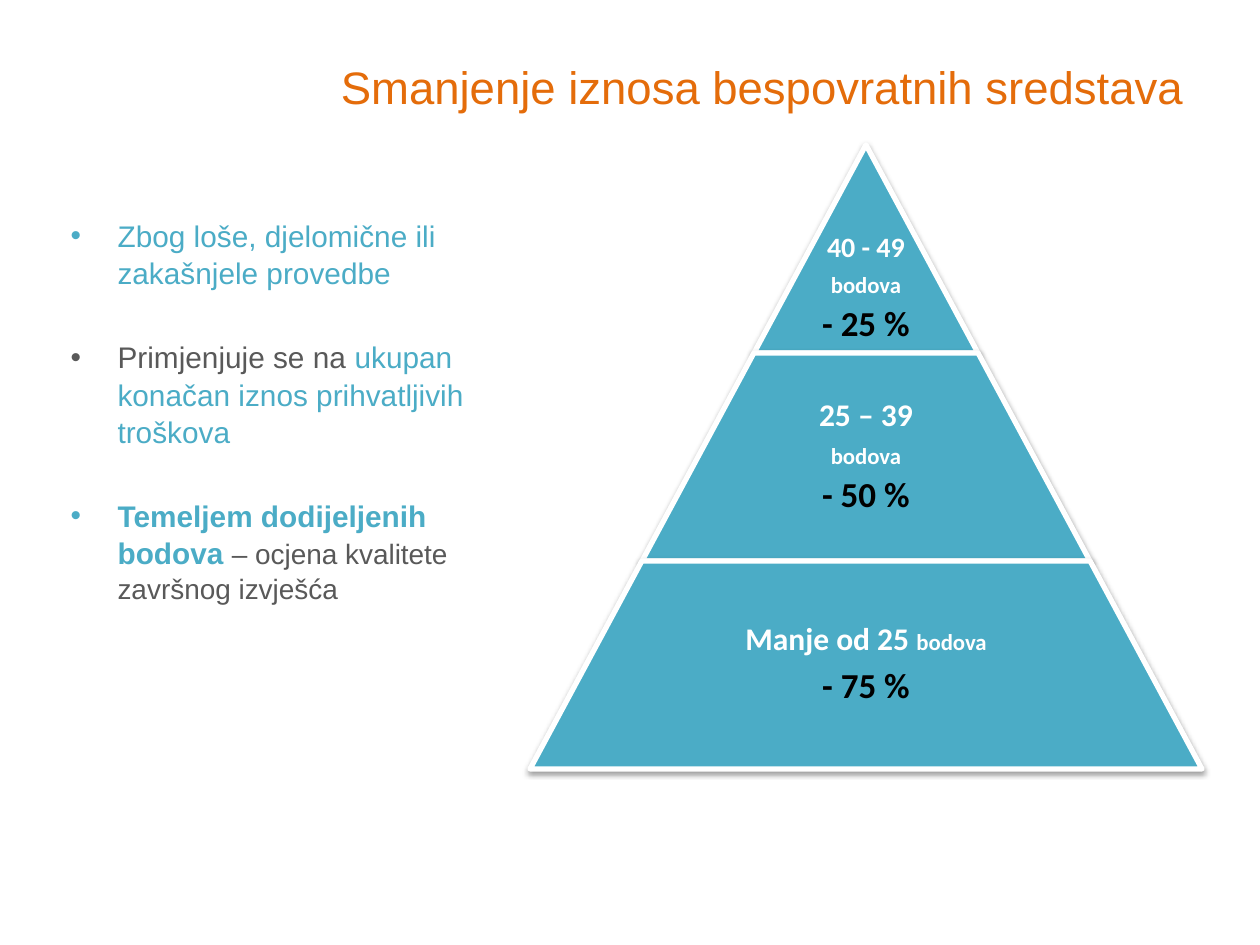
import dataclasses

import lxml.etree
import pptx
import pptx.dml.color
import pptx.enum.shapes
import pptx.enum.text
import pptx.oxml
import pptx.oxml.ns
import pptx.util

EMU_PER_PX = 914400 / 126
ALIGN = pptx.enum.text.PP_ALIGN
ANCHOR = pptx.enum.text.MSO_ANCHOR


@dataclasses.dataclass(frozen=True)
class Theme:
    orange: str = "E46C0A"
    teal: str = "4BACC6"
    grey: str = "595959"
    white: str = "FFFFFF"
    black: str = "000000"
    slide_font: str = "Arial"
    pyramid_font: str = "Calibri"
    title: int = 26
    body: int = 17
    body_small: int = 16
    peak: int = 16
    range: int = 18
    unit: int = 13
    cut: int = 20
    tier_line: int = 3


THEME = Theme()


def px(length):
    return pptx.util.Emu(round(length * EMU_PER_PX))


def rgb(colour):
    return pptx.dml.color.RGBColor.from_string(colour)


def place(shape, left, top, width, height):
    shape.left, shape.top = px(left), px(top)
    shape.width, shape.height = px(width), px(height)


def add_text(paragraph, text, *, size, colour, font=THEME.slide_font, bold=False):
    run = paragraph.add_run()
    run.text = text
    run.font.size = pptx.util.Pt(size)
    run.font.name = font
    run.font.bold = bold
    run.font.color.rgb = rgb(colour)


def prepare_frame(frame, anchor, inset=None):
    frame.word_wrap = True
    frame.auto_size = pptx.enum.text.MSO_AUTO_SIZE.NONE
    frame.vertical_anchor = anchor
    if inset is not None:
        frame.margin_left = frame.margin_right = px(inset)
        frame.margin_top = frame.margin_bottom = px(inset)


def next_paragraph(frame, index):
    return frame.paragraphs[0] if index == 0 else frame.add_paragraph()


def add_title(slide, text):
    title = slide.shapes.title
    place(title, 312, 43, 885, 87)
    prepare_frame(title.text_frame, ANCHOR.MIDDLE)
    heading = title.text_frame.paragraphs[0]
    heading.alignment = ALIGN.RIGHT
    add_text(heading, text, size=THEME.title, colour=THEME.orange)


def set_bullet(paragraph, indent):
    properties = paragraph._p.get_or_add_pPr()
    properties.set("marL", str(px(indent)))
    properties.set("indent", str(-px(indent)))
    bullet = lxml.etree.SubElement(properties, pptx.oxml.ns.qn("a:buChar"))
    bullet.set("char", "•")


def add_reasons(slide, reasons):
    body = slide.placeholders[1]
    place(body, 58, 210, 438, 494)
    prepare_frame(body.text_frame, ANCHOR.TOP)
    for index, parts in enumerate(reasons):
        reason = next_paragraph(body.text_frame, index)
        set_bullet(reason, 47)
        reason.alignment = ALIGN.LEFT
        reason.line_spacing = 1.04
        reason.space_before = pptx.util.Pt(27 if index else 0)
        for text, style in parts:
            add_text(reason, text, **style)


def add_soft_shadow(shape):
    shape._element.spPr.append(pptx.oxml.parse_xml(
        f'<a:effectLst {pptx.oxml.ns.nsdecls("a")}>'
        '<a:outerShdw blurRad="40000" dist="20000" dir="5400000" rotWithShape="0">'
        f'<a:srgbClr val="{THEME.black}"><a:alpha val="38000"/></a:srgbClr>'
        '</a:outerShdw></a:effectLst>'))


def add_tier(pyramid, left, top, width, height):
    tier = pyramid.shapes.add_shape(
        pptx.enum.shapes.MSO_SHAPE.TRAPEZOID, px(left), px(top), px(width), px(height))
    tier.adjustments[0] = 0.538
    tier.fill.solid()
    tier.fill.fore_color.rgb = rgb(THEME.teal)
    tier.line.color.rgb = rgb(THEME.white)
    tier.line.width = pptx.util.Pt(THEME.tier_line)
    add_soft_shadow(tier)


def add_tier_label(pyramid, lines, left, top, width, height, anchor):
    label = pyramid.shapes.add_textbox(px(left), px(top), px(width), px(height))
    prepare_frame(label.text_frame, anchor, inset=3)
    for index, parts in enumerate(lines):
        line = next_paragraph(label.text_frame, index)
        line.alignment = ALIGN.CENTER
        line.line_spacing = 0.9
        line.space_after = pptx.util.Pt(round(0.35 * parts[0][1], 1))
        for text, size, colour in parts:
            add_text(line, text, size=size, colour=colour,
                     font=THEME.pyramid_font, bold=True)


def add_pyramid(slide, tiers):
    centre, top, step, height = 866, 145, 224, 208
    pyramid = slide.shapes.add_group_shape()
    for index, (lines, label_width, label_height, anchor) in enumerate(tiers):
        tier_top = top + index * height
        tier_width = step * (index + 1)
        add_tier(pyramid, centre - tier_width / 2, tier_top, tier_width, height)
        add_tier_label(pyramid, lines, centre - label_width / 2, tier_top,
                       label_width, label_height, anchor)


def main():
    deck = pptx.Presentation()
    deck.slide_width, deck.slide_height = px(1260), px(945)
    slide = deck.slides.add_slide(deck.slide_layouts[1])

    teal = {"size": THEME.body, "colour": THEME.teal}
    grey = {"size": THEME.body, "colour": THEME.grey}
    reasons = [
        [("Zbog loše, djelomične ili zakašnjele provedbe", teal)],
        [("Primjenjuje se na ", grey),
         ("ukupan konačan iznos prihvatljivih troškova", teal)],
        [("Temeljem dodijeljenih bodova ", {**teal, "bold": True}),
         ("– ocjena kvalitete završnog izvješća", {**grey, "size": THEME.body_small})],
    ]

    unit = ("bodova", THEME.unit, THEME.white)
    cuts = [[(text, THEME.cut, THEME.black)] for text in ("- 25 %", "- 50 %", "- 75 %")]
    tiers = [
        ([[("40 - 49", THEME.peak, THEME.white)], [unit], cuts[0]],
         224, 202, ANCHOR.BOTTOM),
        ([[("25 – 39", THEME.range, THEME.white)], [unit], cuts[1]],
         291, 208, ANCHOR.MIDDLE),
        ([[("Manje od 25 ", THEME.range, THEME.white), unit], cuts[2]],
         436, 208, ANCHOR.MIDDLE),
    ]

    add_title(slide, "Smanjenje iznosa bespovratnih sredstava")
    add_reasons(slide, reasons)
    add_pyramid(slide, tiers)
    deck.save("out.pptx")


if __name__ == "__main__":
    main()
